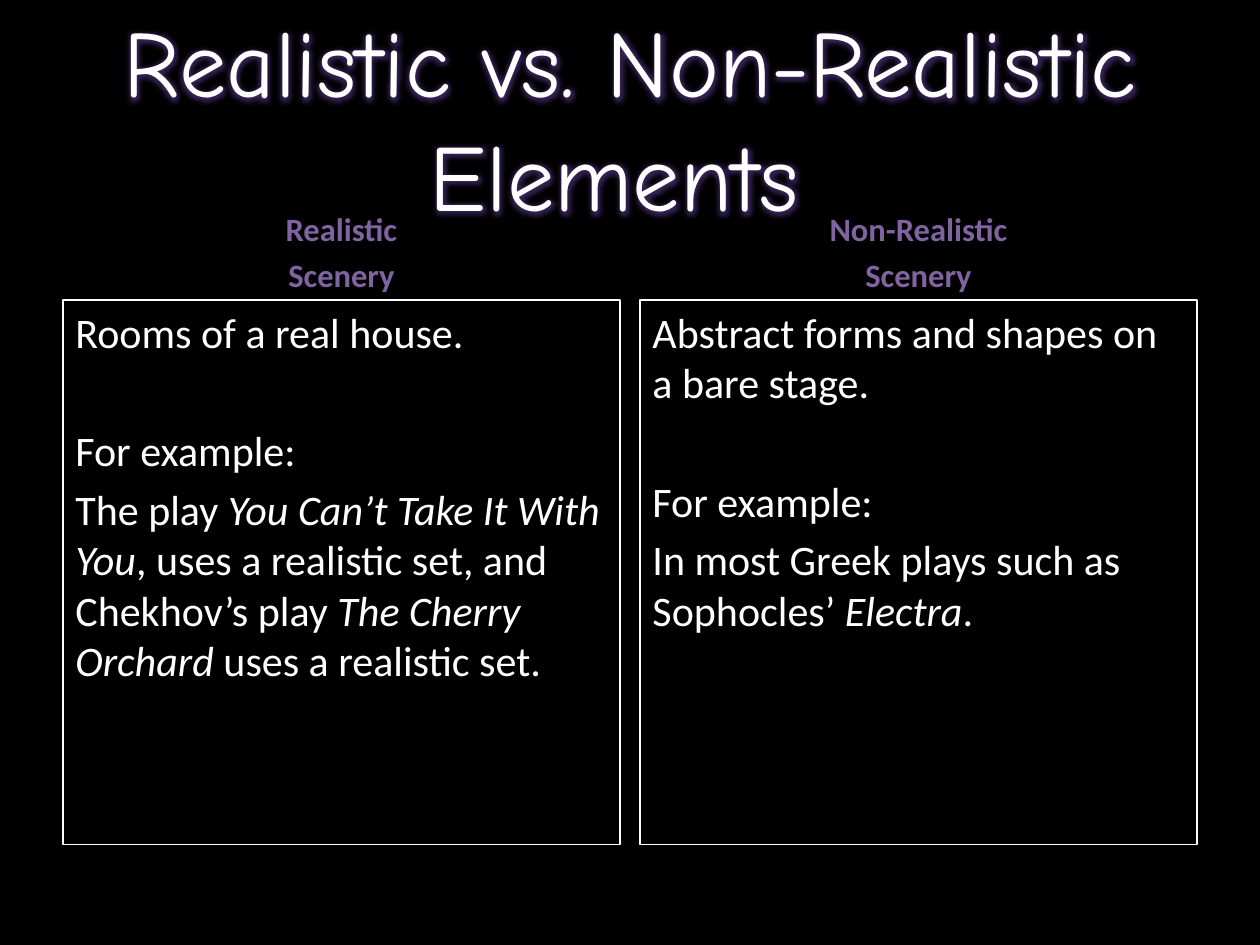
from lxml import etree
from pptx import Presentation
from pptx.dml.color import RGBColor
from pptx.enum import shapes, text
from pptx.oxml.ns import qn
from pptx.util import Inches, Pt

TITLE = "Realistic vs. Non-Realistic Elements "
# Each body paragraph is a list of (words, italic) runs.
COLUMNS = [
    (["Realistic", "Scenery"], [
        [("Rooms of a real house.", False)],
        [("For example:", False)],
        [("The play ", False), ("You Can’t Take It With You", True),
         (", uses a realistic set, and Chekhov’s play ", False),
         ("The Cherry Orchard", True), (" uses a realistic set.", False)],
    ]),
    (["Non-Realistic", "Scenery"], [
        [("Abstract forms and shapes on a bare stage.", False)],
        [("For example:", False)],
        [("In most Greek plays such as Sophocles’ ", False),
         ("Electra", True), (".", False)],
    ]),
]
COLORS = {"background": "000000", "text": "FFFFFF", "heading": "8064A2", "glow": "55388A"}
LEFT, COLUMN_WIDTH, COLUMN_STEP = 0.5, 4.42, 4.58
HEADING_TOP, HEADING_HEIGHT, BODY_HEIGHT = 1.68, 0.7, 4.32
BODY_GAPS = [4.8, 39, 4.8]  # points before each body paragraph


def rgb(name):
    return RGBColor.from_string(COLORS[name])


def style(paragraph, face, size, color, align, gap=0, bold=False):
    paragraph.alignment = align
    paragraph.space_before = Pt(gap)
    font = paragraph.font
    font.name, font.size, font.bold = face, Pt(size), bold
    font.color.rgb = rgb(color)


def add_paragraphs(frame, paragraphs):
    """Write lists of (words, italic) runs and return the paragraphs."""
    for index, runs in enumerate(paragraphs):
        paragraph = frame.add_paragraph() if index else frame.paragraphs[0]
        for words, italic in runs:
            run = paragraph.add_run()
            run.text = words
            if italic:
                run.font.italic = True
    return frame.paragraphs


def add_glow(run, color, radius):
    run.font.color.rgb = rgb("text")
    effects = etree.Element(qn("a:effectLst"))
    glow = etree.SubElement(effects, qn("a:glow"), rad=str(Pt(radius)))
    tint = etree.SubElement(glow, qn("a:srgbClr"), val=COLORS[color])
    etree.SubElement(tint, qn("a:alpha"), val="60000")
    run.font._element.find(qn("a:solidFill")).addnext(effects)


def add_heading(slide, left, lines):
    box = slide.shapes.add_textbox(Inches(left), Inches(HEADING_TOP),
                                   Inches(COLUMN_WIDTH), Inches(HEADING_HEIGHT))
    frame = box.text_frame
    frame.word_wrap = True
    frame.vertical_anchor = text.MSO_ANCHOR.BOTTOM
    for paragraph in add_paragraphs(frame, [[(line, False)] for line in lines]):
        style(paragraph, "Calibri", 18.6, "heading", text.PP_ALIGN.CENTER, 3.7, bold=True)


def add_body(slide, left, paragraphs):
    panel = slide.shapes.add_shape(
        shapes.MSO_SHAPE.RECTANGLE, Inches(left), Inches(HEADING_TOP + HEADING_HEIGHT),
        Inches(COLUMN_WIDTH), Inches(BODY_HEIGHT))
    panel.shadow.inherit = False
    panel.fill.background()
    panel.line.color.rgb = rgb("text")
    panel.line.width = Pt(0.75)
    frame = panel.text_frame
    frame.word_wrap = True
    frame.vertical_anchor = text.MSO_ANCHOR.TOP
    for paragraph, gap in zip(add_paragraphs(frame, paragraphs), BODY_GAPS):
        style(paragraph, "Calibri", 24, "text", text.PP_ALIGN.LEFT, gap)


def main():
    deck = Presentation()
    deck.slide_width, deck.slide_height = Inches(10), Inches(7.5)
    slide = deck.slides.add_slide(deck.slide_layouts[5])
    slide.background.fill.solid()
    slide.background.fill.fore_color.rgb = rgb("background")

    title = slide.shapes.title
    title.left, title.top = Inches(LEFT), Inches(0.3)
    title.width, title.height = Inches(9), Inches(1.25)
    frame = title.text_frame
    frame.text = TITLE
    frame.word_wrap = True
    frame.auto_size = text.MSO_AUTO_SIZE.NONE
    frame.vertical_anchor = text.MSO_ANCHOR.MIDDLE
    style(frame.paragraphs[0], "Comic Neue", 54, "text", text.PP_ALIGN.CENTER)
    add_glow(frame.paragraphs[0].runs[0], "glow", 8)

    for index, (heading, body) in enumerate(COLUMNS):
        left = LEFT + index * COLUMN_STEP
        add_heading(slide, left, heading)
        add_body(slide, left, body)
    deck.save("out.pptx")


if __name__ == "__main__":
    main()
